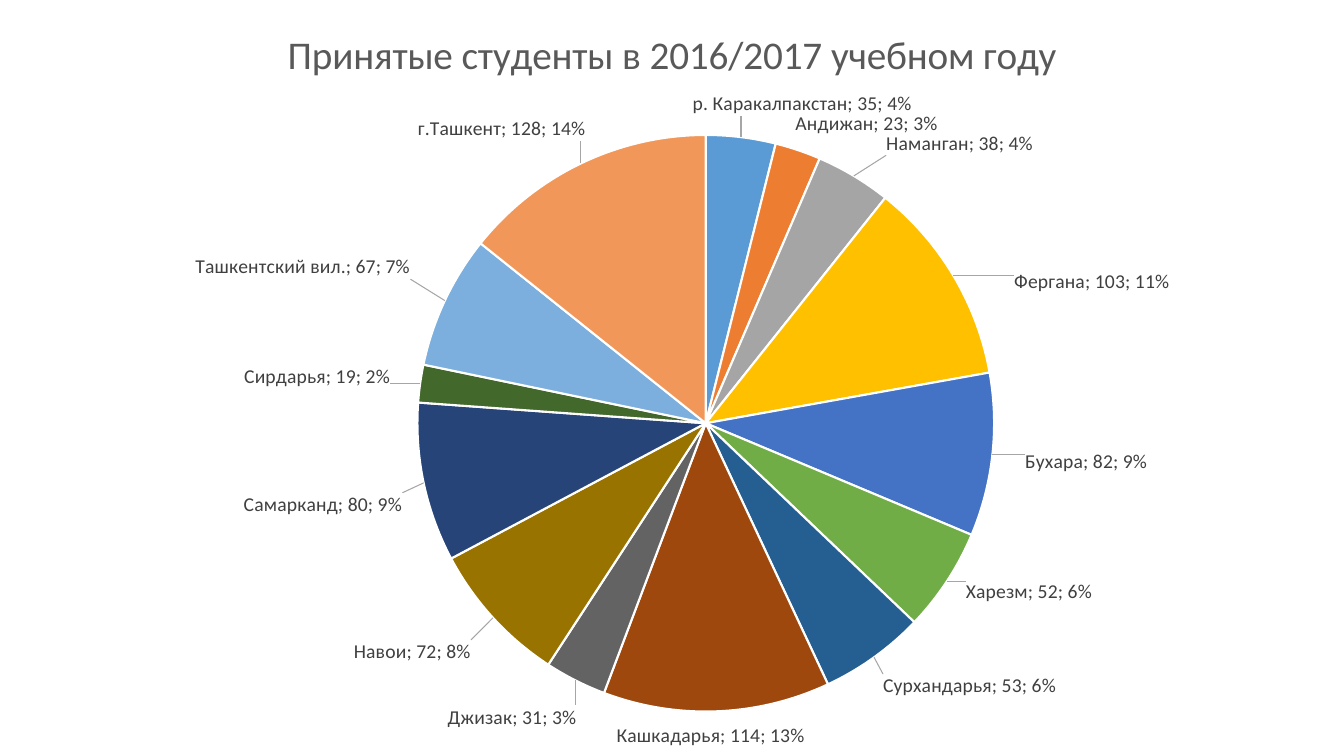
from math import cos, pi, sin

from pptx import Presentation
from pptx.chart.data import CategoryChartData
from pptx.dml.color import RGBColor
from pptx.enum.chart import XL_CHART_TYPE as ChartType, XL_LABEL_POSITION as LabelPosition
from pptx.oxml import parse_xml
from pptx.oxml.ns import nsdecls
from pptx.util import Inches, Pt

WIDTH, HEIGHT = 13.33, 7.5
CENTER_X, CENTER_Y, RADIUS = 7.0, 4.2, 2.86
LABEL_GAP = 0.06
TITLE = "Принятые студенты в 2016/2017 учебном году"

# Region, students, slice colour, label corner nearest to the pie (inches)
REGIONS = [
    ("р. Каракалпакстан", 35, "5B9BD5", 6.87, 1.15),
    ("Андижан", 23, "ED7D31", 7.89, 1.35),
    ("Наманган", 38, "A5A5A5", 8.79, 1.54),
    ("Фергана", 103, "FFC000", 10.06, 2.91),
    ("Бухара", 82, "4472C4", 10.17, 4.46),
    ("Харезм", 52, "70AD47", 9.58, 5.75),
    ("Сурхандарья", 53, "255E91", 8.76, 6.69),
    ("Кашкадарья", 114, "9E480E", 7.05, 7.18),
    ("Джизак", 31, "636363", 5.72, 7.0),
    ("Навои", 72, "997300", 4.67, 6.35),
    ("Самарканд", 80, "264478", 3.99, 4.89),
    ("Сирдарья", 19, "43682B", 3.87, 3.86),
    ("Ташкентский вил.", 67, "7CAFDD", 4.07, 2.77),
    ("г.Ташкент", 128, "F1975A", 5.81, 1.4),
]


def color(hex_value):
    return RGBColor.from_string(hex_value)


def format_font(font, size, hex_value):
    values = {"name": "Calibri", "size": Pt(size), "bold": False}
    for name, value in values.items():
        setattr(font, name, value)
    font.color.rgb = color(hex_value)


def add_pie(slide):
    data = CategoryChartData()
    data.categories = [region[0] for region in REGIONS]
    data.add_series(TITLE, [region[1] for region in REGIONS])
    frame = slide.shapes.add_chart(
        ChartType.PIE, 0, 0, Inches(WIDTH), Inches(HEIGHT), data)
    chart = frame.chart
    chart.has_legend = False
    format_font(chart.font, 10, "000000")
    return chart


def add_title(chart):
    chart.has_title = True
    chart.chart_title.include_in_layout = False
    frame = chart.chart_title.text_frame
    frame.text = TITLE
    format_font(frame.paragraphs[0].runs[0].font, 28, "595959")


def place_pie(chart):
    """Fix the inner plot area to the square around the pie."""
    plot_area = chart.element.xpath(".//c:plotArea")[0]
    for old_layout in plot_area.xpath("./c:layout"):
        plot_area.remove(old_layout)
    sizes = {
        "x": (CENTER_X - RADIUS) / WIDTH,
        "y": (CENTER_Y - RADIUS) / HEIGHT,
        "w": 2 * RADIUS / WIDTH,
        "h": 2 * RADIUS / HEIGHT,
    }
    modes = '<c:xMode val="edge"/><c:yMode val="edge"/>'
    values = "".join(f'<c:{key} val="{size:.4f}"/>' for key, size in sizes.items())
    plot_area.insert(0, parse_xml(
        f'<c:layout {nsdecls("c")}><c:manualLayout><c:layoutTarget val="inner"/>'
        f'{modes}{values}</c:manualLayout></c:layout>'))


def color_slices(series):
    for index, region in enumerate(REGIONS):
        style = series.points[index].format
        style.fill.solid()
        style.fill.fore_color.rgb = color(region[2])
        style.line.color.rgb = color("FFFFFF")
        style.line.width = Pt(1.5)


def label_offsets():
    """Yield each label's shift from its usual place at the rim."""
    total = sum(region[1] for region in REGIONS)
    start = 0
    for _, students, _, corner_x, corner_y in REGIONS:
        angle = 2 * pi * (start + students / 2) / total
        start += students
        reach = RADIUS + LABEL_GAP
        rim_x = CENTER_X + reach * sin(angle)
        rim_y = CENTER_Y - reach * cos(angle)
        yield (corner_x - rim_x) / WIDTH, (corner_y - rim_y) / HEIGHT


def add_labels(chart, series):
    labels = series.data_labels
    format_font(labels.font, 14, "404040")
    labels.position = LabelPosition.OUTSIDE_END
    labels.show_value = labels.show_percentage = labels.show_category_name = True
    root = chart.element.xpath(".//c:ser/c:dLbls")[0]
    separator = f'<c:separator {nsdecls("c")}>; </c:separator>'
    for old_part in root.xpath("./c:showLeaderLines"):
        root.remove(old_part)
    root.append(parse_xml(separator))
    root.append(parse_xml(f'<c:showLeaderLines {nsdecls("c")} val="1"/>'))
    root.append(parse_xml(
        f'<c:leaderLines {nsdecls("c", "a")}><c:spPr><a:ln w="9525"><a:solidFill>'
        '<a:srgbClr val="A6A6A6"/></a:solidFill></a:ln></c:spPr></c:leaderLines>'))
    shown = {"LegendKey": 0, "Val": 1, "CatName": 1, "SerName": 0,
             "Percent": 1, "BubbleSize": 0}
    flags = "".join(f'<c:show{key} val="{flag}"/>' for key, flag in shown.items())
    for index, (shift_x, shift_y) in enumerate(label_offsets()):
        root.insert(index, parse_xml(
            f'<c:dLbl {nsdecls("c")}><c:idx val="{index}"/><c:layout><c:manualLayout>'
            f'<c:x val="{shift_x:.4f}"/><c:y val="{shift_y:.4f}"/>'
            f'</c:manualLayout></c:layout><c:dLblPos val="outEnd"/>{flags}'
            f'<c:separator>; </c:separator></c:dLbl>'))


def main():
    deck = Presentation()
    deck.slide_width, deck.slide_height = Inches(WIDTH), Inches(HEIGHT)
    slide = deck.slides.add_slide(deck.slide_layouts[6])
    chart = add_pie(slide)
    add_title(chart)
    place_pie(chart)
    series = chart.plots[0].series[0]
    color_slices(series)
    add_labels(chart, series)
    deck.save("out.pptx")


if __name__ == "__main__":
    main()
